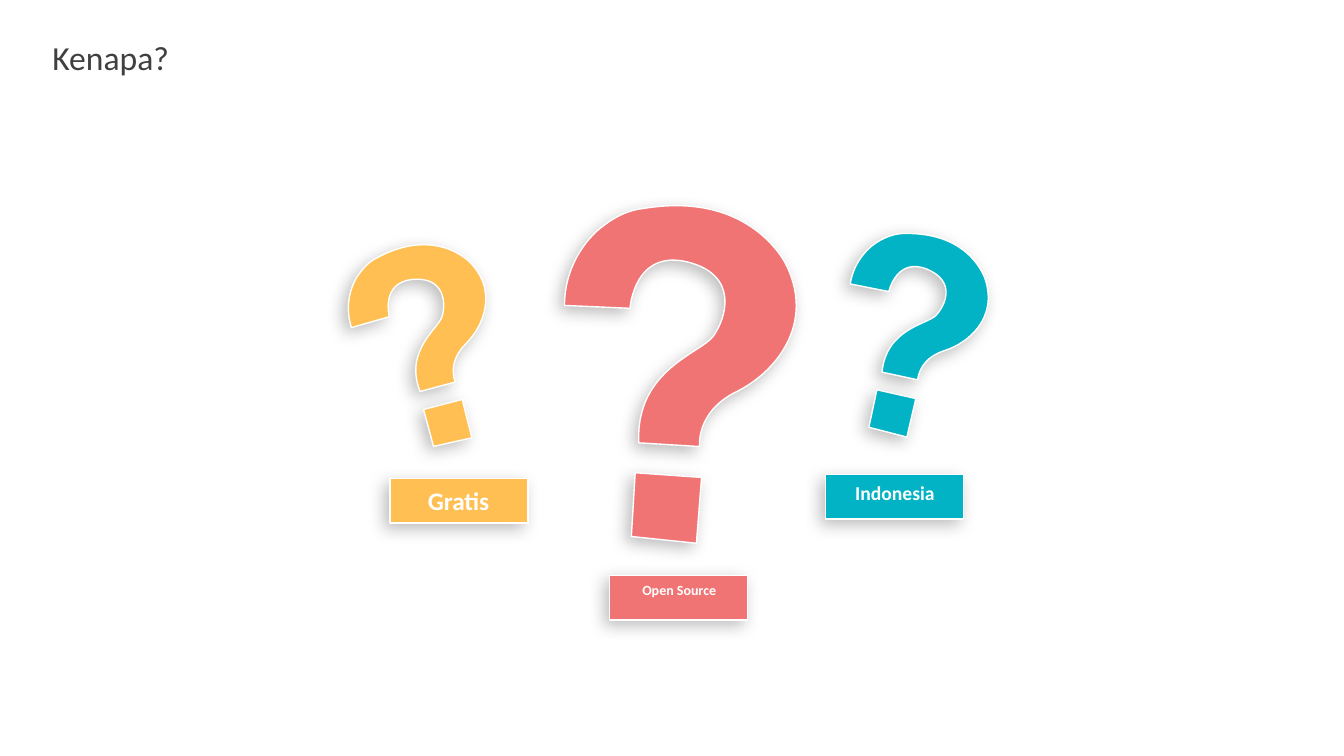
from lxml.etree import SubElement
from pptx import Presentation
from pptx.dml.color import RGBColor
from pptx.enum.shapes import MSO_SHAPE
from pptx.enum.text import MSO_ANCHOR, MSO_AUTO_SIZE, PP_ALIGN
from pptx.oxml.ns import qn
from pptx.util import Pt

HOOK = [
    (108, 1301),
    (544, 1129), (544, 1129), (544, 1129),
    (544, 1129), (397, 730), (784, 659),
    (1164, 592), (1198, 916), (1169, 1063),
    (1147, 1207), (754, 1509), (994, 1980),
    (1401, 1827), (1401, 1827), (1401, 1827),
    (1401, 1827), (1274, 1615), (1478, 1366),
    (1679, 1127), (1800, 694), (1437, 391),
    (1437, 391), (993, 0), (332, 444),
    (332, 444), (223, 500), (136, 657),
    (46, 808), (0, 1058), (108, 1301),
]
DOT = [(0, 163), (161, 590), (605, 444), (447, 0), (0, 163)]

MARKS = [
    ("FFBF53", 0.6, 5.5, (246.2, 160.6), (301.7, 284.4), (278.6, 342)),
    ("F07474", 1, 24.1, (398.2, 123.1), (445.7, 332.6), (435.6, 411.1)),
    ("02B3C5", 0.6, 32.7, (603.4, 153.4), (619.2, 277.2), (589.7, 339.1)),
]
LABELS = [
    ("Gratis", 18, 293.8, 347, 21.6),
    ("Open Source", 10, 451.4, 415.4, 12.2),
    ("Indonesia", 14, 605.5, 343.4, 17.3),
]


def tint(code):
    return RGBColor.from_string(code)


class Deck:
    """Hold the style and the current slide, and draw its elements."""

    def __init__(self, show):
        self.font = "Calibri"
        self.white = "FFFFFF"
        self.slide = show.slides.add_slide(show.slide_layouts[5])
        self.shapes = self.slide.shapes

    def fill_text(self, frame, text, size, color, align, bold=False):
        frame.word_wrap = True
        frame.vertical_anchor = MSO_ANCHOR.TOP
        frame.auto_size = MSO_AUTO_SIZE.SHAPE_TO_FIT_TEXT
        para = frame.paragraphs[0]
        para.alignment = align
        run = para.add_run()
        run.text = text
        run.font.name = self.font
        run.font.size = Pt(size)
        run.font.bold = bold
        run.font.color.rgb = tint(color)

    def title(self, text, left, top, width, height):
        box = self.shapes.title
        box.left, box.top = Pt(left), Pt(top)
        box.width, box.height = Pt(width), Pt(height)
        self.fill_text(box.text_frame, text, 24, "404040", PP_ALIGN.LEFT)

    def label(self, text, size, left, top, height):
        box = self.shapes.add_textbox(Pt(left), Pt(top), Pt(67.5), Pt(height))
        frame = box.text_frame
        frame.margin_left = frame.margin_right = 0
        frame.margin_top = frame.margin_bottom = 0
        self.fill_text(frame, text, size, self.white, PP_ALIGN.CENTER, True)

    def paint(self, shape, color):
        shape.fill.solid()
        shape.fill.fore_color.rgb = tint(color)
        shape.line.color.rgb = tint(self.white)
        shape.line.width = Pt(1)
        shape.shadow.inherit = False
        effects = shape._element.spPr.find(qn("a:effectLst"))
        shade = SubElement(effects, qn("a:outerShdw"), blurRad=str(Pt(12)),
                           dist=str(Pt(5)), dir="8100000", rotWithShape="0")
        black = SubElement(shade, qn("a:srgbClr"), val="000000")
        SubElement(black, qn("a:alpha"), val="26000")

    def plate(self, spot, color):
        left, top = spot
        box = self.shapes.add_shape(MSO_SHAPE.RECTANGLE, Pt(left), Pt(top),
                                    Pt(98.6), Pt(31.7))
        self.paint(box, color)

    def outline(self, points, spot, size, turn, color):
        left, top = spot
        pen = self.shapes.build_freeform(*points[0], scale=Pt(1) * size / 10)
        pen.add_line_segments(points[1:], close=True)
        shape = pen.convert_to_shape(Pt(left), Pt(top))
        shape.rotation = turn
        self.paint(shape, color)
        return shape

    def curve(self, *args):
        shape = self.outline(*args)
        lines = list(shape._element.iter(qn("a:lnTo")))
        for first in range(0, len(lines), 3):
            trio = lines[first:first + 3]
            bend = SubElement(trio[0].getparent(), qn("a:cubicBezTo"))
            trio[0].addprevious(bend)
            for line in trio:
                bend.append(line[0])
                line.getparent().remove(line)


def main():
    show = Presentation()
    show.slide_width, show.slide_height = Pt(960), Pt(540)
    deck = Deck(show)
    deck.title("Kenapa?", 30.2, 23, 334.8, 36)
    for color, size, turn, hook, dot, plate in MARKS:
        deck.outline(DOT, dot, size, turn, color)
        deck.curve(HOOK, hook, size, turn, color)
        deck.plate(plate, color)
    for label in LABELS:
        deck.label(*label)
    show.save("out.pptx")


if __name__ == "__main__":
    main()
